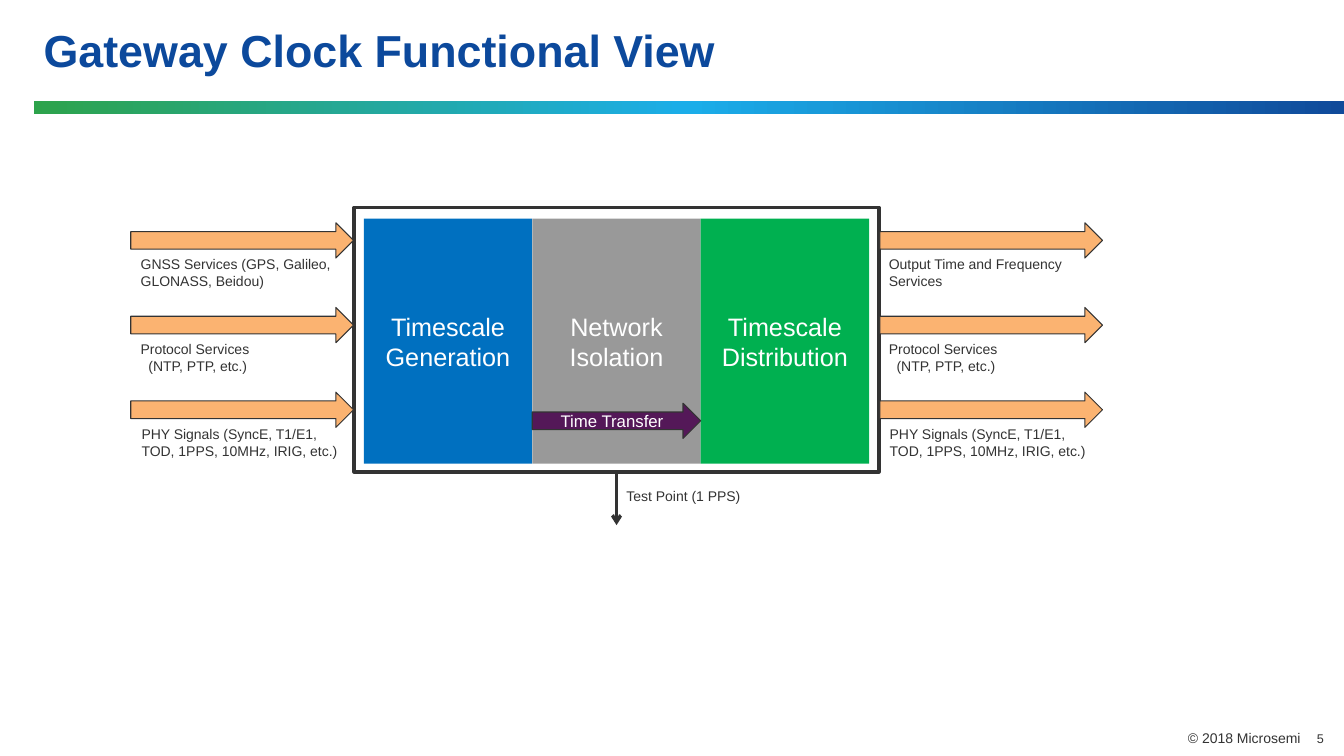
from copy import deepcopy
from dataclasses import dataclass

from lxml.etree import SubElement
from pptx import Presentation
from pptx.dml.color import RGBColor
from pptx.enum.shapes import MSO_CONNECTOR, MSO_SHAPE
from pptx.enum.text import MSO_ANCHOR, MSO_AUTO_SIZE, PP_ALIGN
from pptx.oxml.ns import qn
from pptx.shapes.autoshape import Shape
from pptx.slide import Slide
from pptx.util import Pt

COLORS = {
    "title": "0C499C", "text": "333333", "white": "FFFFFF",
    "generation": "0070C0", "isolation": "999999", "distribution": "00B050",
    "signal": "FBB371", "transfer": "541858",
    "bar_left": "2DA34B", "bar_middle": "1BADE9", "bar_right": "104A9A",
}
BLOCK_LEFT, BLOCK_TOP, BLOCK_W, BLOCK_H = 259.9, 156.2, 120.3, 175
ROW_TOP, ROW_STEP = 159.1, 60.5
ARROW_W, ARROW_H = 159.1, 25.2
LABEL_DROP, LABEL_H = 20.2, 31.7


@dataclass(frozen=True)
class Box:
    left: float
    top: float
    width: float
    height: float


@dataclass(frozen=True)
class Block:
    lines: tuple[str, ...]
    color: str


@dataclass(frozen=True)
class Signal:
    lines: tuple[str, ...]
    indent: float = 0
    shift: float = 0
    width: float = 152.6


@dataclass(frozen=True)
class Side:
    arrow_left: float
    label_left: float
    signals: tuple[Signal, ...]


BLOCKS = (
    Block(("Timescale", "Generation"), "generation"),
    Block(("Network Isolation",), "isolation"),
    Block(("Timescale Distribution",), "distribution"),
)
PROTOCOL = Signal(("Protocol Services", "(NTP, PTP, etc.)"), indent=5.56)
PHY = Signal(("PHY Signals (SyncE, T1/E1, TOD, 1PPS, 10MHz, IRIG, etc.)",),
             shift=0.6, width=159.1)
SIDES = (
    Side(93.4, 93.4,
         (Signal(("GNSS Services (GPS, Galileo, GLONASS, Beidou)",)), PROTOCOL, PHY)),
    Side(628.4, 627.8,
         (Signal(("Output Time and Frequency Services",)), PROTOCOL, PHY)),
)


def rgb(name: str) -> RGBColor:
    return RGBColor.from_string(COLORS[name])


def write(sp: Shape, lines: tuple[str, ...], size: float, color: str = "text",
          align: PP_ALIGN = PP_ALIGN.LEFT, bold: bool = False,
          indent: float = 0, **frame: object) -> None:
    tf = sp.text_frame
    for name, value in {"word_wrap": True, **frame}.items():
        setattr(tf, name, value)
    font = {"name": "Arial", "size": Pt(size), "bold": bold}
    for i, line in enumerate(lines):
        p = tf.add_paragraph() if i else tf.paragraphs[0]
        p.alignment = align
        if i and indent:
            p._p.get_or_add_pPr().set("marL", str(Pt(indent)))
        r = p.add_run()
        r.text = line
        for name, value in font.items():
            setattr(r.font, name, value)
        r.font.color.rgb = rgb(color)


def add_text(s: Slide, box: Box) -> Shape:
    return s.shapes.add_textbox(Pt(box.left), Pt(box.top), Pt(box.width), Pt(box.height))


def add_label(s: Slide, box: Box, lines: tuple[str, ...], indent: float = 0,
              align: PP_ALIGN = PP_ALIGN.LEFT) -> None:
    write(add_text(s, box), lines, 10, indent=indent, align=align,
          auto_size=MSO_AUTO_SIZE.SHAPE_TO_FIT_TEXT)


def add_shape(s: Slide, kind: MSO_SHAPE, box: Box, fill: str = "", line: float = 0) -> Shape:
    sp = s.shapes.add_shape(kind, Pt(box.left), Pt(box.top), Pt(box.width), Pt(box.height))
    sp.shadow.inherit = False
    if fill:
        sp.fill.solid()
        sp.fill.fore_color.rgb = rgb(fill)
    else:
        sp.fill.background()
    if line:
        sp.line.color.rgb = rgb("text")
        sp.line.width = Pt(line)
    else:
        sp.line.fill.background()
    return sp


def add_bar(s: Slide) -> None:
    fill = add_shape(s, MSO_SHAPE.RECTANGLE, Box(24, 72, 936, 9.4)).fill
    fill.gradient()
    fill.gradient_angle = 0
    first = fill.gradient_stops[0]._gs
    first.addnext(deepcopy(first))
    names = ("bar_left", "bar_middle", "bar_right")
    for i, (stop, name) in enumerate(zip(fill.gradient_stops, names)):
        stop.position = i / 2
        stop.color.rgb = rgb(name)


def add_test_point(s: Slide, frame: Shape) -> None:
    x = frame.left + frame.width // 2
    y = frame.top + frame.height
    cx = s.shapes.add_connector(MSO_CONNECTOR.STRAIGHT, x, y, x, Pt(375.1))
    cx.begin_connect(frame, 2)
    cx.line.color.rgb = rgb("text")
    cx.line.width = Pt(2.25)
    SubElement(cx.line._get_or_add_ln(), qn("a:tailEnd"), type="arrow")
    SubElement(cx._element.spPr, qn("a:effectLst"))
    add_label(s, Box(440.4, 344.9, 152.6, 19.4), ("Test Point (1 PPS)",))


def add_side(s: Slide, side: Side) -> None:
    for i, signal in enumerate(side.signals):
        top = ROW_TOP + i * ROW_STEP
        add_shape(s, MSO_SHAPE.RIGHT_ARROW,
                  Box(side.arrow_left, top, ARROW_W, ARROW_H), "signal", 0.75)
        add_label(s, Box(side.label_left + signal.shift, top + LABEL_DROP,
                         signal.width, LABEL_H), signal.lines, signal.indent)


def main() -> None:
    prs = Presentation()
    prs.slide_width, prs.slide_height = Pt(960), Pt(540)
    s = prs.slides.add_slide(prs.slide_layouts[6])

    add_bar(s)
    write(add_text(s, Box(642, 518.4, 310.8, 28.8)), ("5",), 9, align=PP_ALIGN.RIGHT)
    add_label(s, Box(643.7, 517.7, 292.3, 19.4), ("© 2018 Microsemi",),
              align=PP_ALIGN.RIGHT)
    title = add_text(s, Box(24, 0, 912, 72))
    write(title, ("Gateway Clock Functional View",), 32, "title", bold=True,
          vertical_anchor=MSO_ANCHOR.MIDDLE, margin_bottom=0)
    title.text_frame.paragraphs[0].line_spacing = 0.9

    for i, block in enumerate(BLOCKS):
        sp = add_shape(s, MSO_SHAPE.RECTANGLE,
                       Box(BLOCK_LEFT + i * BLOCK_W, BLOCK_TOP, BLOCK_W, BLOCK_H),
                       block.color)
        write(sp, block.lines, 18, "white", PP_ALIGN.CENTER,
              vertical_anchor=MSO_ANCHOR.MIDDLE)
    frame = add_shape(s, MSO_SHAPE.RECTANGLE, Box(252.9, 148.2, 375, 189), line=2.25)

    for side in SIDES:
        add_side(s, side)

    transfer = add_shape(s, MSO_SHAPE.RIGHT_ARROW,
                         Box(BLOCK_LEFT + BLOCK_W, 288, BLOCK_W, ARROW_H), "transfer", 0.75)
    write(transfer, ("Time Transfer",), 12, "white", PP_ALIGN.CENTER,
          vertical_anchor=MSO_ANCHOR.MIDDLE)
    add_test_point(s, frame)

    prs.save("out.pptx")


if __name__ == "__main__":
    main()
